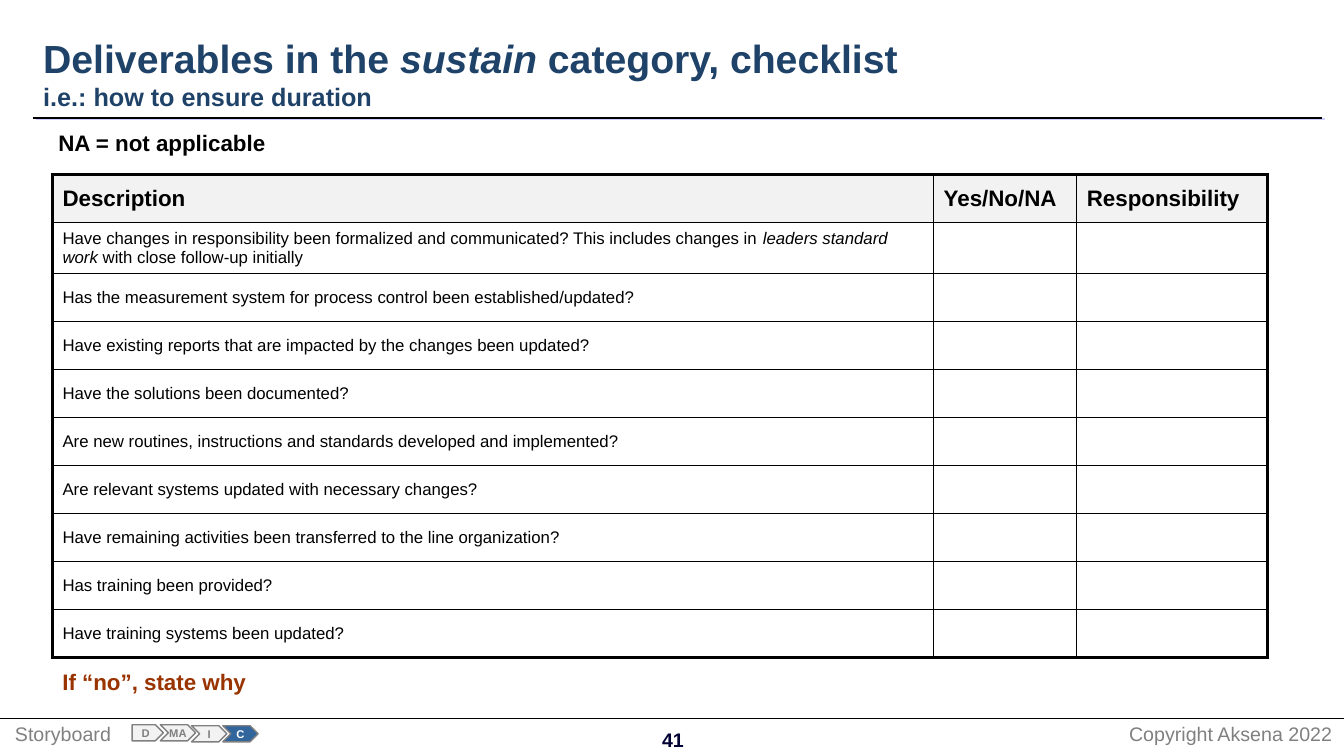
from lxml import etree
from pptx import Presentation, util as u
from pptx.dml.color import RGBColor
from pptx.enum import shapes, text
from pptx.oxml import parse_xml
from pptx.oxml.ns import nsdecls, qn

PX = 9144  # 100 px to the inch
SHADOW = (
    f'<a:effectLst {nsdecls("a")}><a:outerShdw dist="28400" dir="1594000" algn="ctr">'
    '<a:srgbClr val="CCCCFF"/></a:outerShdw></a:effectLst>'
)
BLACK, NAVY, GREY, PALE = "000000", "1F4268", "808080", "F2F2F2"
CENTER = text.PP_ALIGN.CENTER
MIDDLE = text.MSO_ANCHOR.MIDDLE


def rgb(value):
    return RGBColor.from_string(value)


def write(p, content, size, color, bold=False, align=None):
    """Fill a paragraph; parts between asterisks are italic."""
    for i, part in enumerate(content.split("*")):
        r = p.add_run()
        r.text = part
        if i % 2:
            r.font.italic = True
    p.alignment = align
    p.font.name = "Arial"
    p.font.size = u.Pt(size)
    p.font.bold = bold
    p.font.color.rgb = rgb(color)


prs = Presentation()
prs.slide_width, prs.slide_height = 1333 * PX, 750 * PX
s = prs.slides.add_slide(prs.slide_layouts[6])

# Rules under the title and above the footer
for x1, x2, y, width, effect in [
    (33, 1311, 117, 1.5, SHADOW),
    (0, 1333, 713, 0.75, f'<a:effectLst {nsdecls("a")}/>'),
]:
    rule = s.shapes.add_connector(
        shapes.MSO_CONNECTOR.STRAIGHT, x1 * PX, y * PX, x2 * PX, y * PX)
    rule.line.color.rgb = rgb(BLACK)
    rule.line.width = u.Pt(width)
    rule._element.spPr.append(parse_xml(effect))

# Title with shadowed text
title = s.shapes.add_textbox(*[v * PX for v in (33, 30, 1211, 85)])
tf = title.text_frame
tf.word_wrap = True
tf.vertical_anchor = MIDDLE
write(tf.paragraphs[0], "Deliverables in the *sustain* category, checklist", 28, NAVY, True)
write(tf.add_paragraph(), "i.e.: how to ensure duration", 18, NAVY, True)
for p in tf.paragraphs:
    fill = p._p.pPr.find(qn("a:defRPr")).find(qn("a:solidFill"))
    fill.addnext(parse_xml(SHADOW))

# Notes and footer
for box, content, size, color, bold, align in [
    ((48, 123, 228, 37), "NA = not applicable", 16, BLACK, True, None),
    ((52, 658, 205, 37), "If “no”, state why", 16, "993300", True, None),
    ((5, 711, 116, 34), "Storyboard", 14, GREY, False, None),
    ((613, 717, 109, 34), "41", 14, "000033", True, CENTER),
    ((1110, 711, 223, 34), "Copyright Aksena 2022", 14, GREY, False, None),
]:
    tf = s.shapes.add_textbox(*[v * PX for v in box]).text_frame
    tf.word_wrap = align is CENTER
    write(tf.paragraphs[0], content, size, color, bold, align)

# Checklist table
headers = ["Description", "Yes/No/NA", "Responsibility"]
questions = [
    "Have changes in responsibility been formalized and communicated? "
    "This includes changes in *leaders standard work* with close follow-up initially",
    "Has the measurement system for process control been established/updated?",
    "Have existing reports that are impacted by the changes been updated?",
    "Have the solutions been documented?",
    "Are new routines, instructions and standards developed and implemented?",
    "Are relevant systems updated with necessary changes?",
    "Have remaining activities been transferred to the line organization?",
    "Has training been provided?",
    "Have training systems been updated?",
]
rows = [headers] + [[question, "", ""] for question in questions]
last_row, last_col = len(rows) - 1, len(headers) - 1
table = s.shapes.add_table(
    len(rows), len(headers), *[v * PX for v in (52, 173, 1205, 481)]).table
table.first_row = table.horz_banding = False
for column, width in zip(table.columns, (874, 142, 189)):
    column.width = width * PX
for i, row in enumerate(rows):
    table.rows[i].height = (51 if i == 1 else 48) * PX - PX // 3
    for j, content in enumerate(row):
        cell = table.cell(i, j)
        cell.vertical_anchor = MIDDLE
        if i == 0:
            cell.fill.solid()
            cell.fill.fore_color.rgb = rgb(PALE)
        else:
            cell.fill.background()
        write(cell.text_frame.paragraphs[0], content, 12 if i else 16, BLACK, i == 0)
        outer = {"L": j == 0, "R": j == last_col, "T": i == 0, "B": i == last_row}
        for k, (side, thick) in enumerate(outer.items()):
            ln = etree.Element(qn(f"a:ln{side}"), w=str(u.Pt(2.25 if thick else 1)))
            solid = etree.SubElement(ln, qn("a:solidFill"))
            etree.SubElement(solid, qn("a:srgbClr"), val=BLACK)
            cell._tc.get_or_add_tcPr().insert(k, ln)

# Phase tracker in the footer
tracker = s.shapes.add_group_shape()
for label, x, y, width in [
    ("D", 131, 719, 31), ("MA", 159, 719, 35), ("I", 190, 720, 35), ("C", 221, 720, 35),
]:
    kind = shapes.MSO_SHAPE.PENTAGON if label == "D" else shapes.MSO_SHAPE.CHEVRON
    current = label == "C"
    sp = tracker.shapes.add_shape(kind, x * PX, y * PX, width * PX, 16 * PX)
    sp.shadow.inherit = False
    sp.fill.solid()
    sp.fill.fore_color.rgb = rgb("31659C" if current else PALE)
    sp.line.color.rgb = rgb(GREY)
    sp.line.width = u.Pt(1)
    tf = sp.text_frame
    tf.word_wrap = False
    tf.vertical_anchor = MIDDLE
    tf.margin_left = tf.margin_right = tf.margin_top = tf.margin_bottom = 0
    write(tf.paragraphs[0], label, 8, "FFFFFF" if current else GREY, True, CENTER)

prs.save("out.pptx")
